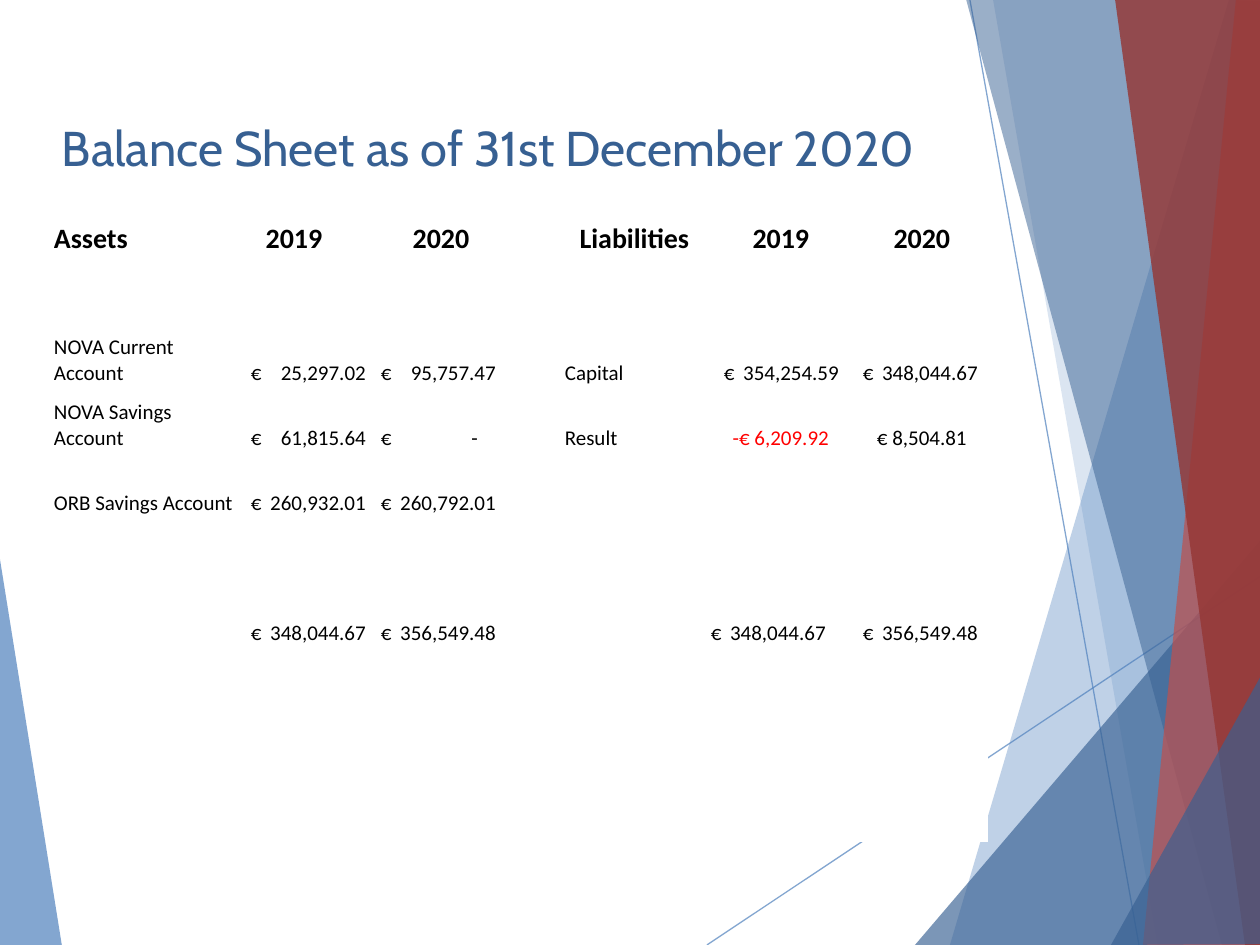
from lxml import etree
from pptx import Presentation
from pptx import util as u
from pptx.dml.color import RGBColor
from pptx.enum import shapes, text
from pptx.oxml.ns import qn

PX = 914400 // 126
BLUE, NAVY, RED, BRICK = "4F81BD", "376092", "C0504D", "953735"

# Panels and lines from back to front: points, colour, opacity in percent
BACK = [([(-1, 553), (62, 946), (-1, 945)], BLUE, 70)]
LINES = [((707, 945), (1261, 576)), ((970, 0), (1139, 945))]
FRONT = [
    ([(1229, 0), (950, 945), (1262, 946), (1261, 1)], BLUE, 36),
    ([(993, -1), (1158, 945), (1261, 945), (1261, -1)], BLUE, 20),
    ([(915, 945), (1260, 541), (1261, 945)], NAVY, 66),
    ([(966, -1), (1222, 945), (1261, 944), (1261, -1)], NAVY, 50),
    ([(1236, -1), (1143, 945), (1261, 945), (1260, -1)], RED, 70),
    ([(1115, -1), (1245, 945), (1262, 945), (1260, -1)], BRICK, 82),
    ([(1111, 945), (1262, 674), (1262, 944)], NAVY, 66),
]

TITLE = "Balance Sheet as of 31st December 2020"
COLS = [193, 130, 130, 58, 141, 152, 130]
ROWS = [77] + [65] * 9
HEAD = ["Assets", "2019", "2020", "", "Liabilities", "2019", "2020"]
# A tuple is a euro amount: number, then left inset and tab stop in px
BODY = {
    2: ["NOVA Current Account", ("25,297.02", 5, 115), ("95,757.47", 5, 115), "",
        "Capital", ("354,254.59", 19, 115), ("348,044.67", 6, 115)],
    3: ["NOVA Savings Account", ("61,815.64", 5, 115), ("-", 5, 97), "",
        "Result", "-€ 6,209.92", "€ 8,504.81"],
    4: ["ORB Savings Account", ("260,932.01", 5, 115), ("260,792.01", 5, 115)],
    6: ["", ("348,044.67", 5, 115), ("356,549.48", 5, 115), "",
        "", ("348,044.67", 6, 115), ("356,549.48", 6, 115)],
}


def px(n):
    return u.Emu(n * PX)


def rgb(code):
    return RGBColor.from_string(code)


def fade(fill, pct):
    """Set the opacity of a solid fill's colour element."""
    col = fill.find(".//" + qn("a:srgbClr"))
    etree.SubElement(col, qn("a:alpha")).set("val", str(pct * 1000))


def panel(slide, pts, color, pct):
    form = slide.shapes.build_freeform(*pts[0], scale=PX)
    form.add_line_segments(pts[1:], close=True)
    shape = form.convert_to_shape()
    shape.shadow.inherit = False
    shape.fill.solid()
    shape.fill.fore_color.rgb = rgb(color)
    shape.line.fill.background()
    fade(shape._element.spPr.find(qn("a:solidFill")), pct)


def line(slide, start, end):
    ends = [px(n) for n in start + end]
    wire = slide.shapes.add_connector(shapes.MSO_CONNECTOR.STRAIGHT, *ends)
    wire.line.width = u.Pt(0.75)
    wire.line.color.rgb = rgb(BLUE)
    props = wire._element.spPr
    fade(props.find(qn("a:ln")), 70)
    etree.SubElement(props, qn("a:effectLst"))


def write(par, words, size, color="000000", face="Calibri", bold=False):
    run = par.add_run()
    run.text = words
    font = run.font
    font.size, font.name, font.bold = u.Pt(size), face, bold
    font.color.rgb = rgb(color)


def heading(slide):
    box = slide.shapes.add_textbox(px(53), px(55), px(993), px(114))
    frame = box.text_frame
    frame.word_wrap = True
    frame.vertical_anchor = text.MSO_ANCHOR.TOP
    frame.margin_left, frame.margin_top = px(9), px(66)
    frame.margin_bottom = 0
    write(frame.paragraphs[0], TITLE, 27.9, NAVY, "Cabin")


def amount(cell, value, left, stop):
    """Put the euro sign at the left and the number at a right tab."""
    cell.margin_left = px(left)
    par = cell.text_frame.paragraphs[0]
    tabs = etree.SubElement(par._p.get_or_add_pPr(), qn("a:tabLst"))
    tab = etree.SubElement(tabs, qn("a:tab"))
    tab.set("pos", str(px(stop)))
    tab.set("algn", "r")
    write(par, "€\t" + value, 12)


def fill_in(cell, item, row, col):
    if isinstance(item, tuple):
        amount(cell, *item)
    elif item:
        par = cell.text_frame.paragraphs[0]
        if col in (1, 2, 5, 6) or (row == 0 and col == 4):
            par.alignment = text.PP_ALIGN.CENTER
        color = "FF0000" if item.startswith("-") else "000000"
        write(par, item, 12 if row else 16, color, bold=row == 0)


def sheet(slide):
    frame = slide.shapes.add_table(len(ROWS), len(COLS), px(53), px(179),
                                   px(sum(COLS)), px(sum(ROWS)))
    grid = frame.table
    grid.first_row = grid.horz_banding = False
    for col, width in zip(grid.columns, COLS):
        col.width = px(width)
    for r, height in enumerate(ROWS):
        grid.rows[r].height = px(height)
        items = HEAD if r == 0 else BODY.get(r, [])
        for c in range(len(COLS)):
            cell = grid.cell(r, c)
            cell.fill.solid()
            cell.fill.fore_color.rgb = rgb("FFFFFF")
            cell.vertical_anchor = text.MSO_ANCHOR.BOTTOM
            cell.margin_left = cell.margin_right = cell.margin_top = px(1)
            cell.margin_bottom = 0
            fill_in(cell, items[c] if c < len(items) else "", r, c)
    grid.cell(0, 1).margin_right = px(35)


def main():
    deck = Presentation()
    deck.slide_width, deck.slide_height = px(1260), px(945)
    slide = deck.slides.add_slide(deck.slide_layouts[6])
    for item in BACK:
        panel(slide, *item)
    for ends in LINES:
        line(slide, *ends)
    for item in FRONT:
        panel(slide, *item)
    heading(slide)
    sheet(slide)
    deck.save("out.pptx")


if __name__ == "__main__":
    main()
